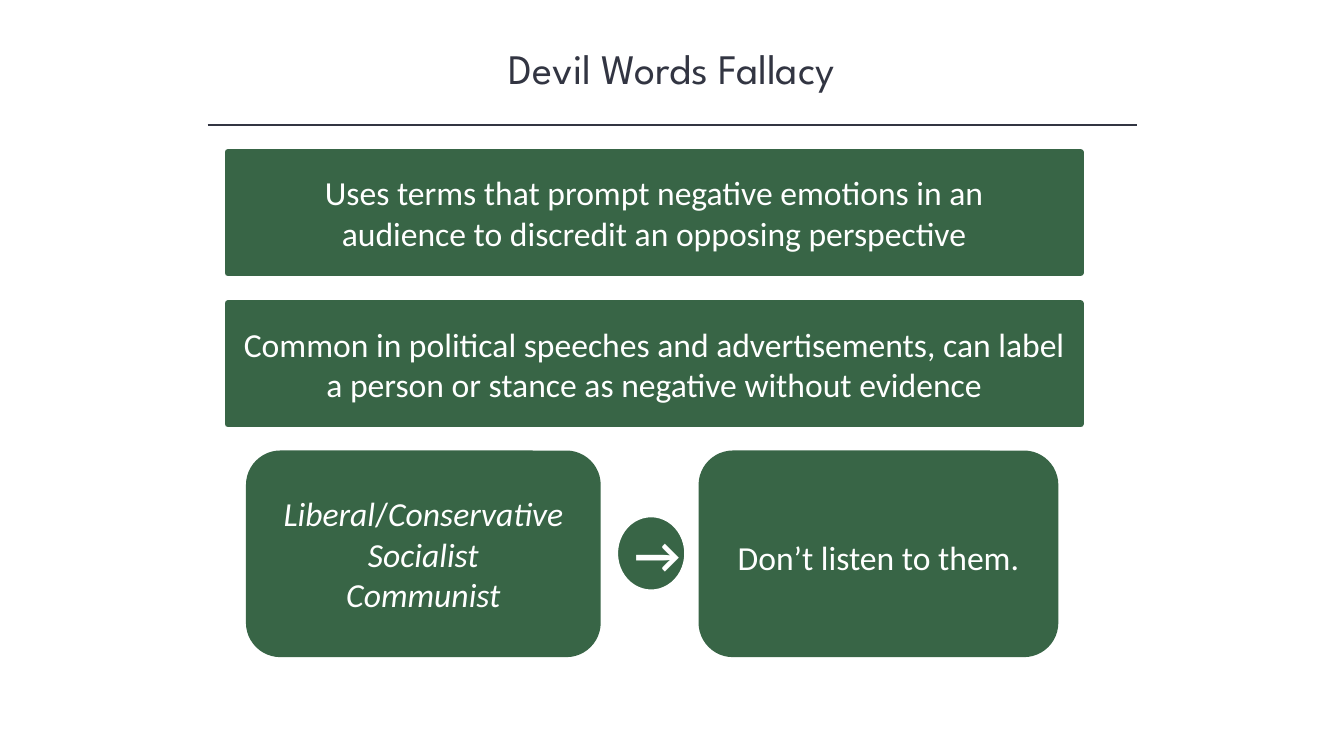
import pptx
import pptx.util
from lxml import etree
from pptx.dml.color import RGBColor
from pptx.enum.shapes import MSO_CONNECTOR, MSO_SHAPE
from pptx.enum.text import MSO_ANCHOR, MSO_AUTO_SIZE, PP_ALIGN
from pptx.oxml.ns import qn

GREEN = RGBColor(0x38, 0x65, 0x46)
INK = RGBColor(0x32, 0x35, 0x42)
WHITE = RGBColor(0xFF, 0xFF, 0xFF)

Pt = pptx.util.Pt


class SlideBuilder:
    """Holds the text style and the current slide."""

    BODY = {"name": "Calibri", "size": Pt(24)}
    HEADING = {"name": "League Spartan", "size": Pt(30)}

    def __init__(self, slide):
        self.slide = slide

    def fill_text(self, frame, paragraphs, style, color, inset=7.2, drop=0):
        """Each paragraph is a list of (text, format values) runs."""
        settings = {
            "word_wrap": True, "auto_size": MSO_AUTO_SIZE.NONE,
            "vertical_anchor": MSO_ANCHOR.MIDDLE,
            "margin_left": Pt(inset), "margin_right": Pt(inset),
            "margin_top": Pt(3.6 + drop), "margin_bottom": Pt(3.6),
        }
        for key, value in settings.items():
            setattr(frame, key, value)
        for index, runs in enumerate(paragraphs):
            line = frame.add_paragraph() if index else frame.paragraphs[0]
            line.alignment = PP_ALIGN.CENTER
            for words, extra in runs:
                run = line.add_run()
                run.text = words
                for key, value in {**style, **extra}.items():
                    setattr(run.font, key, value)
                run.font.color.rgb = color

    def title(self, words, left, top, width, height):
        heading = self.slide.shapes.title
        place = {"left": left, "top": top, "width": width, "height": height}
        for key, value in place.items():
            setattr(heading, key, Pt(value))
        self.fill_text(heading.text_frame, [[(words, {})]], self.HEADING, INK)

    def rule(self, left, right, y):
        divider = self.slide.shapes.add_connector(
            MSO_CONNECTOR.STRAIGHT, Pt(left), Pt(y), Pt(right), Pt(y))
        divider.line.color.rgb = INK
        divider.line.width = Pt(1)
        etree.SubElement(divider._element.spPr, qn("a:effectLst"))

    def panel(self, kind, box, paragraphs, border=None, **layout):
        panel = self.slide.shapes.add_shape(kind, *map(Pt, box))
        panel.shadow.inherit = False
        panel.fill.solid()
        panel.fill.fore_color.rgb = GREEN
        if border:
            panel.line.color.rgb, panel.line.width = border[0], Pt(border[1])
        else:
            panel.line.fill.background()
        self.fill_text(panel.text_frame, paragraphs, self.BODY, WHITE, **layout)


def main():
    deck = pptx.Presentation()
    deck.slide_width, deck.slide_height = Pt(960), Pt(540)
    builder = SlideBuilder(deck.slides.add_slide(deck.slide_layouts[5]))

    # Heading
    builder.title("Devil Words Fallacy", 120, 26.6, 720, 44)
    builder.rule(148.3, 812.2, 89.3)

    # Conclusion and labels
    italic = {"italic": True}
    labels = [
        [("Liberal", italic), ("/", {}), ("Conservative", italic)],
        [("Socialist", italic)],
        [("Communist", italic)],
    ]
    conclusion = [[("Don’t listen to them.", {})]]
    card_top, card_height = 321.8, 147.6
    for left, width, content, drop in (
            (499, 257, conclusion, 5), (175.7, 253.4, labels, 0)):
        builder.panel(MSO_SHAPE.ROUNDED_RECTANGLE,
                      (left, card_top, width, card_height), content, drop=drop)

    # Definition bars
    definitions = (
        ("Uses terms that prompt negative emotions in an audience "
         "to discredit an opposing perspective", 34),
        ("Common in political speeches and advertisements, can label "
         "a person or stance as negative without evidence", 7.2),
    )
    for row, (words, inset) in enumerate(definitions):
        builder.panel(MSO_SHAPE.RECTANGLE,
                      (162.7, 108.7 + 108 * row, 609.1, 86.4),
                      [[(words, {})]], border=(GREEN, 4.5), inset=inset)

    # Arrow badge between the cards
    builder.panel(MSO_SHAPE.OVAL, (438.5, 366.5, 53.3, 57.6),
                  [[("→", {"size": Pt(36), "bold": True})]],
                  border=(WHITE, 6))

    deck.save("out.pptx")


if __name__ == "__main__":
    main()
